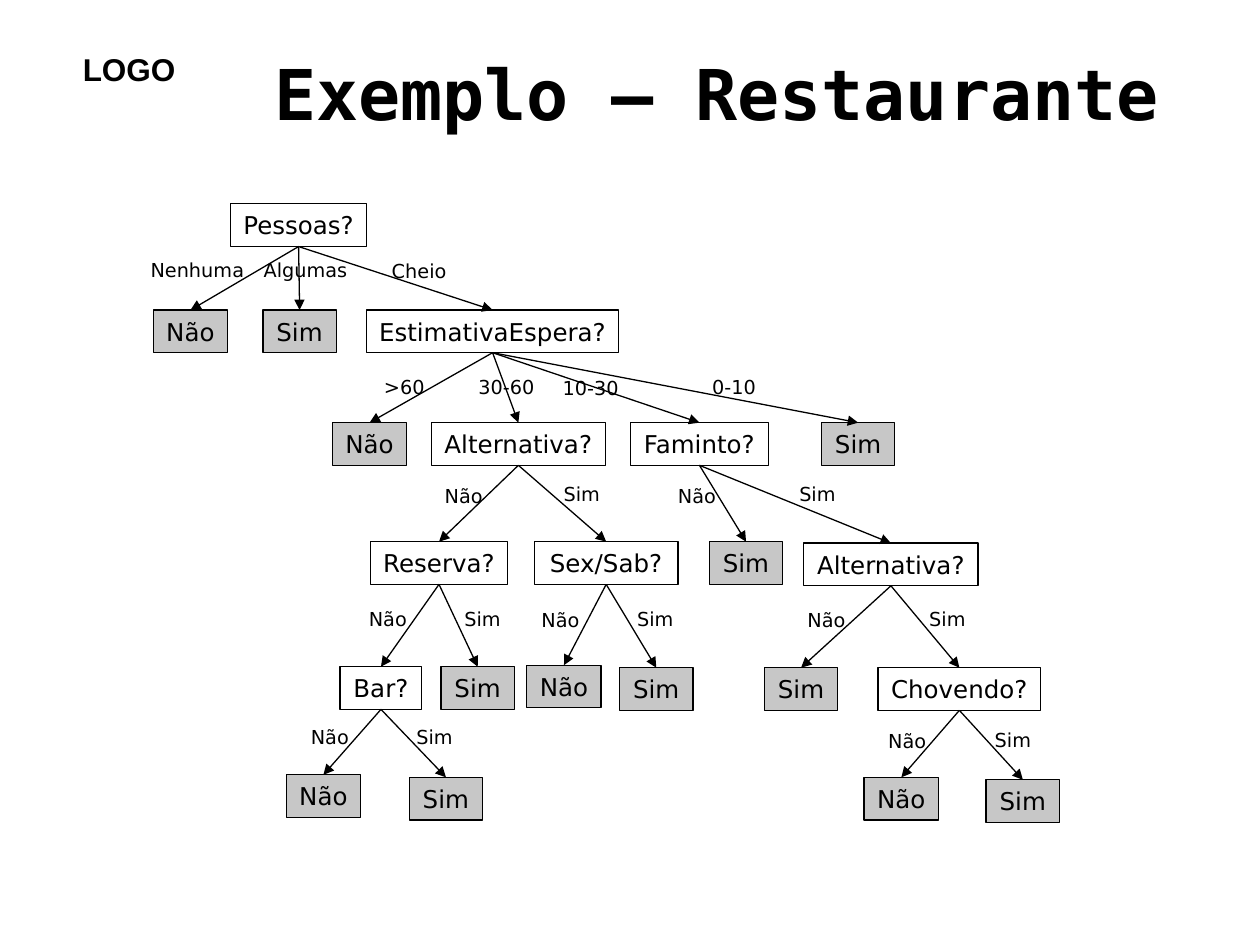
from dataclasses import dataclass

from lxml.etree import SubElement
from pptx import Presentation
from pptx.dml.color import RGBColor
from pptx.enum.shapes import MSO_CONNECTOR as Connector, MSO_SHAPE as Shape
from pptx.enum.text import MSO_ANCHOR as Anchor, MSO_AUTO_SIZE as AutoSize, PP_ALIGN as Align
from pptx.oxml.ns import qn
from pptx.util import Cm, Pt

BLACK = RGBColor(0x00, 0x00, 0x00)
WHITE = RGBColor(0xFF, 0xFF, 0xFF)
GRAY = RGBColor(0xC7, 0xC7, 0xC7)

FONT = "DejaVu Sans"
LINE_WIDTH = Pt(0.75)
NODE_HEIGHT = 0.86
LABEL_HEIGHT = 0.74
NODE_WIDTHS = {
    "Pessoas?": 2.75, "EstimativaEspera?": 5.08, "Alternativa?": 3.51,
    "Faminto?": 2.79, "Reserva?": 2.77, "Sex/Sab?": 2.9, "Bar?": 1.65,
    "Chovendo?": 3.28, "Não": 1.5, "Sim": 1.48,
}
LABEL_WIDTHS = {
    "Nenhuma": 2.45, "Algumas": 2.25, "Cheio": 1.67, ">60": 1.39,
    "30-60": 1.72, "10-30": 1.72, "0-10": 1.49, "Não": 1.3, "Sim": 1.3,
}


@dataclass
class Node:
    """A question or an answer; center and top are in centimetres."""
    text: str
    center: float
    top: float
    branches: tuple = ()


@dataclass
class Branch:
    """A labelled way to a child; center and top place the label."""
    label: str
    center: float
    top: float
    child: Node


BAR = Node("Bar?", 7.68, 13.44, (
    Branch("Não", 6.65, 14.5, Node("Não", 6.52, 15.62)),
    Branch("Sim", 8.76, 14.5, Node("Sim", 8.99, 15.67)),
))
RESERVATION = Node("Reserva?", 8.85, 10.92, (
    Branch("Não", 7.82, 12.12, BAR),
    Branch("Sim", 9.73, 12.12, Node("Sim", 9.63, 13.44)),
))
WEEKEND = Node("Sex/Sab?", 12.22, 10.92, (
    Branch("Não", 11.3, 12.14, Node("Não", 11.37, 13.41)),
    Branch("Sim", 13.21, 12.12, Node("Sim", 13.23, 13.46)),
))
RAINING = Node("Chovendo?", 19.34, 13.46, (
    Branch("Não", 18.29, 14.58, Node("Não", 18.17, 15.67)),
    Branch("Sim", 20.42, 14.55, Node("Sim", 20.62, 15.72)),
))
HUNGRY_ALTERNATIVE = Node("Alternativa?", 17.96, 10.95, (
    Branch("Não", 16.66, 12.14, Node("Sim", 16.15, 13.46)),
    Branch("Sim", 19.1, 12.12, RAINING),
))
ALTERNATIVE = Node("Alternativa?", 10.45, 8.52, (
    Branch("Não", 9.35, 9.63, RESERVATION),
    Branch("Sim", 11.73, 9.6, WEEKEND),
))
HUNGRY = Node("Faminto?", 14.1, 8.52, (
    Branch("Não", 14.05, 9.63, Node("Sim", 15.04, 10.92)),
    Branch("Sim", 16.48, 9.6, HUNGRY_ALTERNATIVE),
))
WAIT_ESTIMATE = Node("EstimativaEspera?", 9.93, 6.25, (
    Branch(">60", 8.15, 7.44, Node("Não", 7.45, 8.52)),
    Branch("30-60", 10.21, 7.44, ALTERNATIVE),
    Branch("10-30", 11.91, 7.47, HUNGRY),
    Branch("0-10", 14.8, 7.44, Node("Sim", 17.3, 8.52)),
))
PATRONS = Node("Pessoas?", 6.02, 4.11, (
    Branch("Nenhuma", 3.98, 5.08, Node("Não", 3.84, 6.25)),
    Branch("Algumas", 6.16, 5.08, Node("Sim", 6.04, 6.25)),
    Branch("Cheio", 8.45, 5.11, WAIT_ESTIMATE),
))


def write(box, text, size, font=FONT, bold=False, align=Align.CENTER):
    frame = box.text_frame
    frame.word_wrap = False
    frame.auto_size = AutoSize.SHAPE_TO_FIT_TEXT
    para = frame.paragraphs[0]
    para.alignment = align
    span = para.add_run()
    span.text = text
    span.font.name = font
    span.font.size = Pt(size)
    span.font.bold = bold
    span.font.color.rgb = BLACK


def add_text(page, text, left, top, width, height, size, **style):
    box = page.shapes.add_textbox(Cm(left), Cm(top), Cm(width), Cm(height))
    write(box, text, size, **style)
    return box


def add_node(page, node):
    width = NODE_WIDTHS[node.text]
    box = page.shapes.add_shape(
        Shape.RECTANGLE, Cm(node.center - width / 2), Cm(node.top),
        Cm(width), Cm(NODE_HEIGHT))
    box.shadow.inherit = False
    box.fill.solid()
    box.fill.fore_color.rgb = WHITE if node.branches else GRAY
    box.line.color.rgb = BLACK
    box.line.width = LINE_WIDTH
    write(box, node.text, 14)
    return box


def add_arrow(page, parent, child):
    arrow = page.shapes.add_connector(Connector.STRAIGHT, 0, 0, 0, 0)
    arrow.begin_connect(parent, 2)
    arrow.end_connect(child, 0)
    arrow.line.color.rgb = BLACK
    arrow.line.width = LINE_WIDTH
    SubElement(arrow.line._get_or_add_ln(), qn("a:tailEnd"), type="triangle")
    SubElement(arrow._element.spPr, qn("a:effectLst"))


def add_label(page, branch):
    width = LABEL_WIDTHS[branch.label]
    add_text(page, branch.label, branch.center - width / 2, branch.top,
             width, LABEL_HEIGHT, 11)


def add_tree(page, node):
    """Draws the node and all below it, and returns the node's box."""
    box = add_node(page, node)
    for branch in node.branches:
        add_arrow(page, box, add_tree(page, branch.child))
        add_label(page, branch)
    return box


def main():
    deck = Presentation()
    deck.slide_width, deck.slide_height = Cm(25.4), Cm(19.05)
    page = deck.slides.add_slide(deck.slide_layouts[6])
    add_text(page, "LOGO", 1.42, 0.89, 2.39, 1.02, 18,
             font="Arial", bold=True, align=Align.LEFT)
    title = add_text(page, "Exemplo – Restaurante", 5.28, 0.64, 18.85, 2.46, 40,
                     font="DejaVu Sans Mono", bold=True, align=Align.LEFT)
    title.text_frame.word_wrap = True
    title.text_frame.auto_size = AutoSize.NONE
    title.text_frame.vertical_anchor = Anchor.MIDDLE
    add_tree(page, PATRONS)
    deck.save("out.pptx")


if __name__ == "__main__":
    main()
